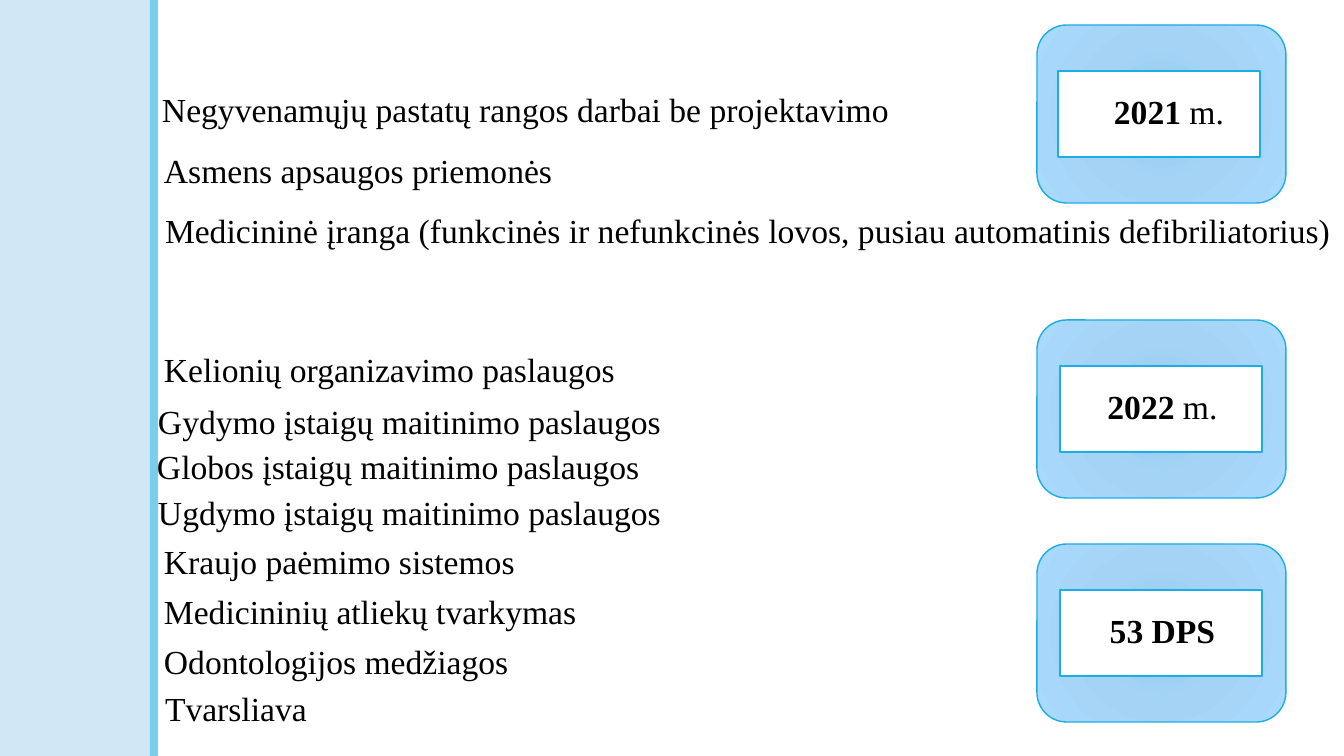
from pptx import Presentation
from pptx.dml.color import RGBColor
from pptx.enum.shapes import MSO_SHAPE
from pptx.enum.text import MSO_ANCHOR, PP_ALIGN
from pptx.oxml import parse_xml
from pptx.oxml.ns import nsdecls
from pptx.util import Emu, Pt

RECT, ROUNDED = MSO_SHAPE.RECTANGLE, MSO_SHAPE.ROUNDED_RECTANGLE
MIDDLE = MSO_ANCHOR.MIDDLE
LEFT, CENTER = PP_ALIGN.LEFT, PP_ALIGN.CENTER
SLIDE_W, SLIDE_H = 1344, 756
EMU_PER_PX = 12192000 / SLIDE_W
FONT = "Times New Roman"
BLACK, WHITE, ACCENT = "000000", "FFFFFF", "1CADE4"
PANEL, STRIPE = "D1E7F6", "77CEEF"
GLOW = [(0, "92C9F0"), (45, "A4D3F5"), (100, "A9D9FD")]

CATEGORIES_2021 = [
    ("Negyvenamųjų pastatų rangos darbai be projektavimo", 162, 72),
    ("Asmens apsaugos priemonės", 164, 133),
    ("Medicininė įranga (funkcinės ir nefunkcinės lovos, pusiau automatinis "
     "defibriliatorius)", 165, 193),
]
CATEGORIES_2022 = [
    ("Kelionių organizavimo paslaugos", 164, 332),
    ("Gydymo įstaigų maitinimo paslaugos", 158, 384),
    ("Globos įstaigų maitinimo paslaugos", 157, 429),
    ("Ugdymo įstaigų maitinimo paslaugos", 158, 475),
    ("Kraujo paėmimo sistemos", 164, 524),
    ("Medicininių atliekų tvarkymas", 164, 574),
    ("Odontologijos medžiagos", 164, 624),
    ("Tvarsliava", 165, 671),
]
BADGES = [
    ("2021", " m.", 25, 21, 25),
    ("2022", " m.", 320, 23, 8),
    ("53 DPS", "", 544, 23, 8),
]


def px(length):
    """Turn pixels into EMU."""
    return Emu(round(length * EMU_PER_PX))


def color(hex_code):
    """Turn a hex string into a colour."""
    return RGBColor.from_string(hex_code)


def add_block(slide, kind, box, fill=None, line=None, line_width=1):
    """Add a shape without shadow, with optional solid fill and outline."""
    block = slide.shapes.add_shape(kind, *map(px, box))
    block.shadow.inherit = False
    if fill:
        block.fill.solid()
        block.fill.fore_color.rgb = color(fill)
    if line:
        block.line.color.rgb = color(line)
        block.line.width = Pt(line_width)
    else:
        block.line.fill.background()
    return block


def fill_with_glow(block):
    """Fill a shape with the radial blue gradient."""
    stops = "".join(
        f'<a:gs pos="{position * 1000}"><a:srgbClr val="{shade}"/></a:gs>'
        for position, shade in GLOW)
    block._element.spPr.insert(2, parse_xml(
        f'<a:gradFill {nsdecls("a")} rotWithShape="1"><a:gsLst>{stops}</a:gsLst>'
        '<a:path path="circle"><a:fillToRect l="100000" t="100000" '
        'r="100000" b="100000"/></a:path></a:gradFill>'))


def write_line(frame, runs, align, indent=0):
    """Write one line of (text, bold) runs into a text frame."""
    frame.word_wrap = True
    frame.vertical_anchor = MIDDLE
    frame.margin_left, frame.margin_right = px(indent), px(5)
    frame.margin_top = frame.margin_bottom = 0
    paragraph = frame.paragraphs[0]
    paragraph.alignment = align
    paragraph.line_spacing = 0.9
    paragraph.font.name = FONT
    paragraph.font.size = Pt(24)
    paragraph.font.color.rgb = color(BLACK)
    for text, bold in runs:
        run = paragraph.add_run()
        run.text = text
        run.font.bold = bold


def add_side_panel(slide, left, top, height):
    """Draw the pale panel and its stripe."""
    panel_width, stripe_width = 150, 8
    add_block(slide, RECT, (left, top, panel_width, height), PANEL)
    add_block(slide, RECT, (left + panel_width, top, stripe_width, height), STRIPE)


def add_categories(slide, categories, right):
    """Place each purchase category from its left edge to the right limit."""
    for text, left, top in categories:
        category = slide.shapes.add_textbox(
            px(left), px(top), px(right - left), px(80))
        write_line(category.text_frame, [(text, False)], LEFT)


def add_badge(slide, left, top, heading, suffix, label_offset, indent):
    """Draw a glowing card with a white label inside."""
    card = add_block(slide, ROUNDED, (left, top, 249, 178), line=ACCENT)
    fill_with_glow(card)
    label = add_block(slide, RECT, (left + label_offset, top + 46, 202, 86),
                      WHITE, ACCENT, 1.25)
    runs = [(heading, True)] + ([(suffix, False)] if suffix else [])
    write_line(label.text_frame, runs, CENTER, indent)


def main():
    """Build and save the slide."""
    deck = Presentation()
    deck.slide_width, deck.slide_height = px(SLIDE_W), px(SLIDE_H)
    slide = deck.slides.add_slide(deck.slide_layouts[6])
    add_side_panel(slide, 0, 0, SLIDE_H)
    for heading, suffix, top, label_offset, indent in BADGES:
        add_badge(slide, 1037, top, heading, suffix, label_offset, indent)
    for categories in (CATEGORIES_2021, CATEGORIES_2022):
        add_categories(slide, categories, SLIDE_W)
    deck.save("out.pptx")


if __name__ == "__main__":
    main()
